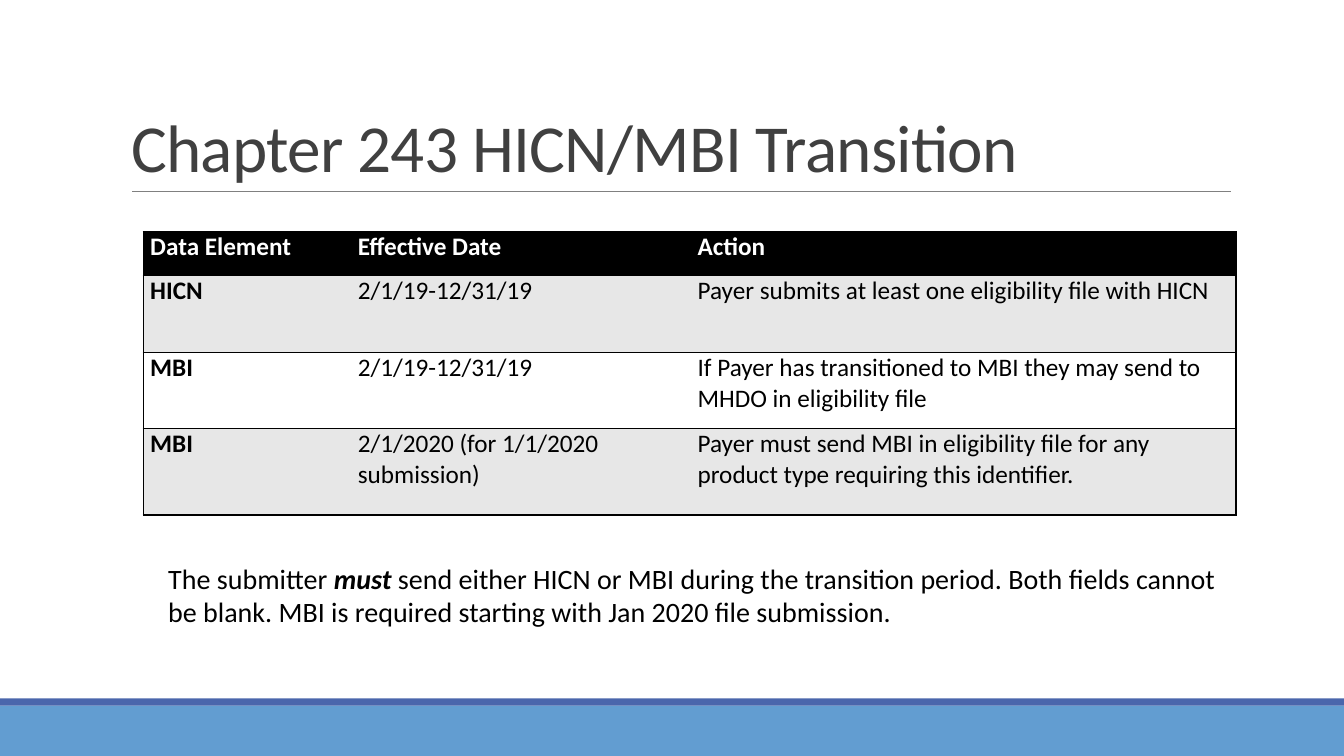
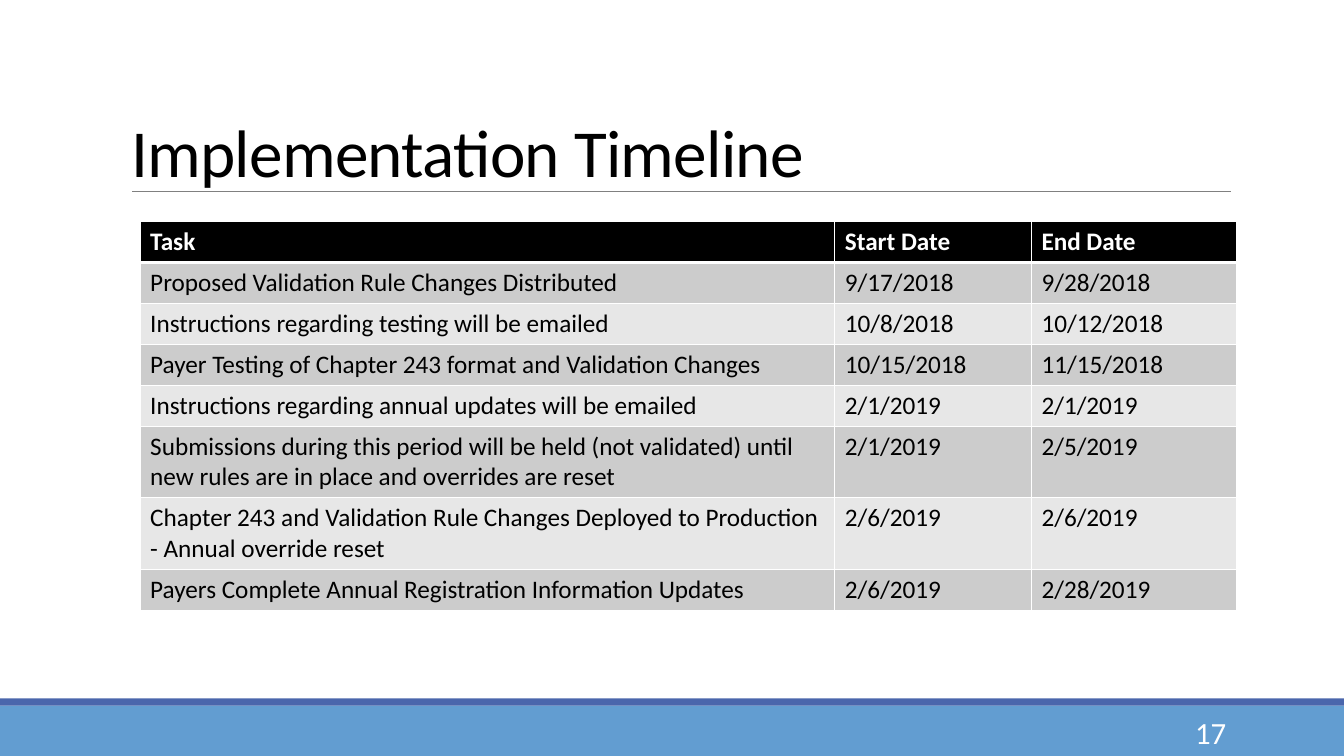
from lxml.etree import SubElement
from pptx import Presentation
from pptx.dml.color import RGBColor
from pptx.enum.shapes import MSO_CONNECTOR, MSO_SHAPE
from pptx.enum.text import MSO_ANCHOR, MSO_AUTO_SIZE, PP_ALIGN
from pptx.oxml.ns import qn
from pptx.util import Inches, Pt

COLORS = {
    "black": "000000",
    "white": "FFFFFF",
    "title": "404040",
    "rule": "808080",
    "band": "629DD1",
    "stripe": "4A66AC",
    "light": "E7E7E7",
    "medium": "CCCCCC",
}
FONT = "Calibri"
TITLE_ONLY = 5

TRANSITION_ROWS = [
    ("Data Element", "Effective Date", "Action"),
    ("HICN", "2/1/19-12/31/19", "Payer submits at least one eligibility file with HICN"),
    ("MBI", "2/1/19-12/31/19",
     "If Payer has transitioned to MBI they may send to MHDO in eligibility file"),
    ("MBI", "2/1/2020 (for 1/1/2020 submission)",
     "Payer must send MBI in eligibility file for any product type requiring this identifier."),
]
TIMELINE_ROWS = [
    ("Task", "Start Date", "End Date"),
    ("Proposed Validation Rule Changes Distributed", "9/17/2018", "9/28/2018"),
    ("Instructions regarding testing will be emailed", "10/8/2018", "10/12/2018"),
    ("Payer Testing of Chapter 243 format and Validation Changes", "10/15/2018", "11/15/2018"),
    ("Instructions regarding annual updates will be emailed", "2/1/2019", "2/1/2019"),
    ("Submissions during this period will be held (not validated) until new rules are in place "
     "and overrides are reset", "2/1/2019", "2/5/2019"),
    ("Chapter 243 and Validation Rule Changes Deployed to Production - Annual override reset",
     "2/6/2019", "2/6/2019"),
    ("Payers Complete Annual Registration Information Updates", "2/6/2019", "2/28/2019"),
]


def rgb(name):
    return RGBColor.from_string(COLORS[name])


def format_run(run, size, color, bold=False, italic=False):
    font = run.font
    font.name = FONT
    font.size = Pt(size)
    font.color.rgb = rgb(color)
    font.bold = bold
    font.italic = italic


def set_border(cell, side, color, width):
    """Draw one cell edge (L, R, T or B); a width of 0 hides it."""
    properties = cell._tc.get_or_add_tcPr()
    line = SubElement(properties, qn(f"a:ln{side}"), w=str(Pt(width)))
    if width:
        fill = SubElement(line, qn("a:solidFill"))
        SubElement(fill, qn("a:srgbClr"), val=COLORS[color])
    else:
        SubElement(line, qn("a:noFill"))


class Deck:
    def __init__(self):
        self.presentation = Presentation()
        self.presentation.slide_width = Inches(13.33)
        self.presentation.slide_height = Inches(7.5)
        self.slide = None

    def add_slide(self, title, title_top, title_color):
        layout = self.presentation.slide_layouts[TITLE_ONLY]
        self.slide = self.presentation.slides.add_slide(layout)
        self.band(7, 0.5, "band")
        self.band(6.93, 0.07, "stripe")
        self.rule(1.31, 12.21, 1.9)
        self.title(title, title_top, title_color)

    def band(self, top, height, color):
        shape = self.slide.shapes.add_shape(
            MSO_SHAPE.RECTANGLE, 0, Inches(top), self.presentation.slide_width, Inches(height))
        shape.shadow.inherit = False
        shape.fill.solid()
        shape.fill.fore_color.rgb = rgb(color)
        shape.line.fill.background()

    def rule(self, left, right, top):
        line = self.slide.shapes.add_connector(
            MSO_CONNECTOR.STRAIGHT, Inches(left), Inches(top), Inches(right), Inches(top))
        line.line.color.rgb = rgb("rule")
        line.line.width = Pt(0.5)
        SubElement(line._element.spPr, qn("a:effectLst"))

    def title(self, text, top, color):
        shape = self.slide.shapes.title
        shape.left, shape.top = Inches(1.2), Inches(top)
        shape.width, shape.height = Inches(11.06), Inches(1.59)
        text_frame = shape.text_frame
        text_frame.text = text
        text_frame.auto_size = MSO_AUTO_SIZE.NONE
        text_frame.vertical_anchor = MSO_ANCHOR.BOTTOM
        paragraph = text_frame.paragraphs[0]
        paragraph.alignment = PP_ALIGN.LEFT
        paragraph.line_spacing = 0.85
        run = paragraph.runs[0]
        format_run(run, 48, color)
        run._r.get_or_add_rPr().set("spc", "-50")

    def text(self, left, top, width, height, parts, size, color,
             alignment=PP_ALIGN.LEFT, anchor=MSO_ANCHOR.TOP):
        """Add one paragraph from (text, emphasized) parts."""
        box = self.slide.shapes.add_textbox(
            Inches(left), Inches(top), Inches(width), Inches(height))
        text_frame = box.text_frame
        text_frame.word_wrap = True
        text_frame.vertical_anchor = anchor
        paragraph = text_frame.paragraphs[0]
        paragraph.alignment = alignment
        for words, emphasized in parts:
            run = paragraph.add_run()
            run.text = words
            format_run(run, size, color, emphasized, emphasized)

    def table(self, left, top, widths, heights, rows, fills, line_color,
              column_lines=True, header_line=1, bold_first_column=False, margins=(0.1, 0.05)):
        """Add a table with a black header and body rows that alternate between fills."""
        table = self.slide.shapes.add_table(
            len(rows), len(widths), Inches(left), Inches(top),
            Inches(sum(widths)), Inches(sum(heights))).table
        for column, width in zip(table.columns, widths):
            column.width = Inches(width)
        for row, height in zip(table.rows, heights):
            row.height = Inches(height)
        last = len(widths) - 1
        for i, values in enumerate(rows):
            header = i == 0
            for j, value in enumerate(values):
                cell = table.cell(i, j)
                cell.margin_left = cell.margin_right = Inches(margins[0])
                cell.margin_top = cell.margin_bottom = Inches(margins[1])
                set_border(cell, "L", line_color, int(column_lines or j == 0))
                set_border(cell, "R", line_color, int(column_lines or j == last))
                set_border(cell, "T", line_color, header_line if i == 1 else 1)
                set_border(cell, "B", line_color, header_line if header else 1)
                cell.fill.solid()
                cell.fill.fore_color.rgb = rgb("black" if header else fills[(i - 1) % 2])
                cell.text_frame.text = value
                format_run(cell.text_frame.paragraphs[0].runs[0], 18,
                           "white" if header else "black",
                           header or (bold_first_column and j == 0))

    def page_number(self, number):
        self.text(10.83, 7.06, 1.43, 0.4, [(str(number), False)], 22, "white",
                  PP_ALIGN.RIGHT, MSO_ANCHOR.MIDDLE)


def main():
    deck = Deck()

    deck.add_slide("Chapter 243 HICN/MBI Transition", 0.31, "title")
    deck.table(1.42, 2.3, (2.06, 3.37, 5.41), (0.43, 0.77, 0.75, 0.86), TRANSITION_ROWS,
               ("light", "white"), "black", column_lines=False, bold_first_column=True,
               margins=(0.07, 0))
    deck.text(1.57, 5.52, 10.84, 0.77, [
        ("The submitter ", False),
        ("must ", True),
        ("send either HICN or MBI during the transition period. Both fields cannot be blank. "
         "MBI is required starting with Jan 2020 file submission.", False),
    ], 20, "black")

    deck.add_slide("Implementation Timeline", 0.36, "black")
    one_line, two_lines = 0.4, 0.71
    deck.table(1.39, 2.2, (6.89, 1.95, 2.03), [one_line] * 5 + [two_lines] * 2 + [one_line],
               TIMELINE_ROWS, ("medium", "light"), "white", header_line=3)
    deck.page_number(17)

    deck.presentation.save("out.pptx")


if __name__ == "__main__":
    main()
